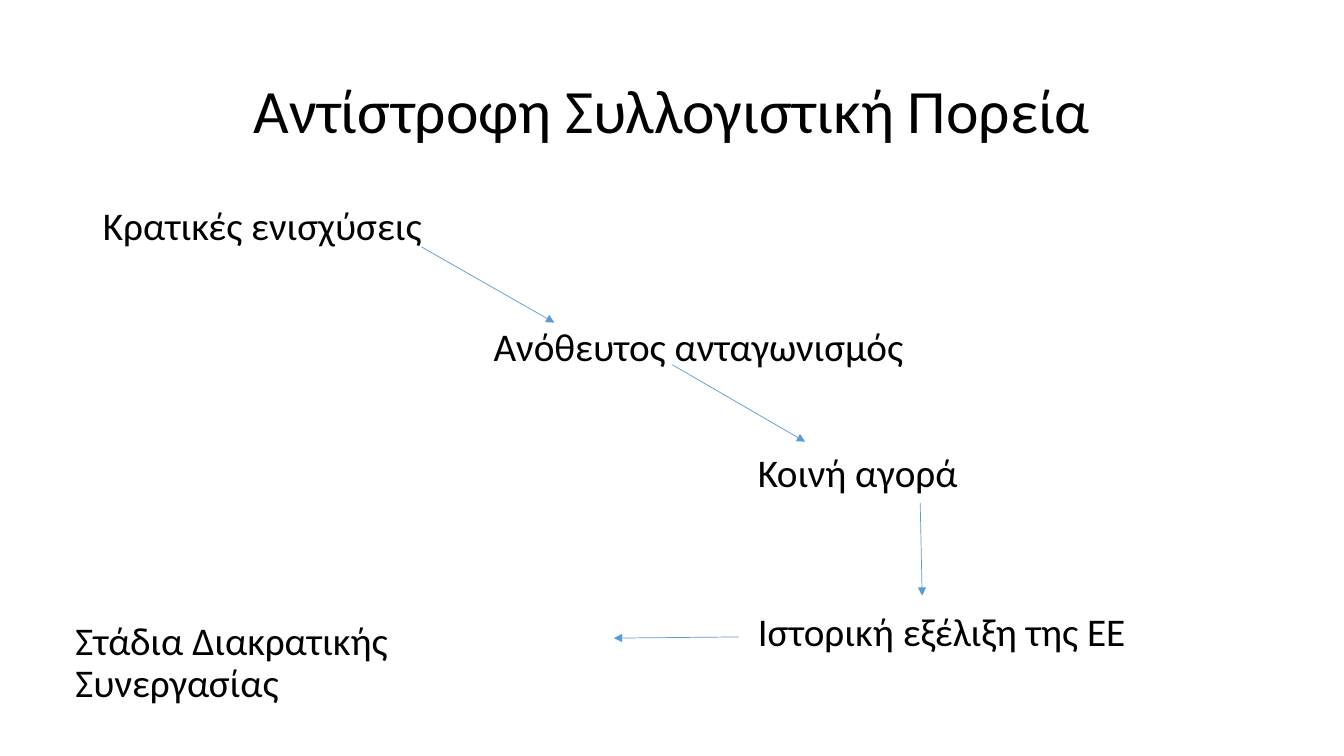
"""Build a slide that traces a reverse line of reasoning from state aid to stages of cooperation."""
from lxml import etree
from pptx import Presentation
from pptx.dml.color import RGBColor
from pptx.enum import shapes, text
from pptx.oxml.ns import qn
from pptx.util import Cm, Pt

BLACK = RGBColor(0x00, 0x00, 0x00)
BLUE = RGBColor(0x5B, 0x9B, 0xD5)


def write(sp, box, words, size):
    sp.left, sp.top, sp.width, sp.height = [Cm(v) for v in box]
    tf = sp.text_frame
    tf.word_wrap = True
    tf.auto_size = text.MSO_AUTO_SIZE.NONE
    p = tf.paragraphs[0]
    p.line_spacing = 0.9
    r = p.add_run()
    r.text = words
    r.font.name = "Calibri"
    r.font.size = Pt(size)
    r.font.color.rgb = BLACK
    return p


prs = Presentation()
prs.slide_width, prs.slide_height = Cm(33.87), Cm(19.05)
slide = prs.slides.add_slide(prs.slide_layouts[1])

title = slide.shapes.title
p = write(title, (2.34, 1.02, 29.21, 3.68), "Αντίστροφη Συλλογιστική Πορεία", 44)
p.alignment = text.PP_ALIGN.CENTER
title.text_frame.vertical_anchor = text.MSO_ANCHOR.MIDDLE

steps = [
    ("Κρατικές ενισχύσεις", (2.34, 5.08, 12.83, 3.71)),
    ("Ανόθευτος ανταγωνισμός", (12.19, 8.13, 12.83, 3.71)),
    ("Κοινή αγορά", (18.85, 11.3, 10.8, 3.1)),
    ("Ιστορική εξέλιξη της ΕΕ", (18.85, 15.32, 10.6, 2.64)),
    ("Στάδια Διακρατικής Συνεργασίας", (1.65, 15.54, 13.5, 2.18)),
]
for i, (words, box) in enumerate(steps):
    sp = slide.placeholders[1] if i == 0 else slide.shapes.add_textbox(0, 0, 0, 0)
    p = write(sp, box, words, 28)
    p.space_before = Pt(10)
    p.alignment = text.PP_ALIGN.LEFT
    if i == 0:
        pPr = p._p.get_or_add_pPr()
        pPr.set("marL", "0")
        pPr.set("indent", "0")
        etree.SubElement(pPr, qn("a:buNone"))

arrows = [
    (10.62, 6.22, 13.97, 8.13),
    (16.94, 9.19, 20.29, 11.13),
    (23.19, 12.67, 23.24, 15.01),
    (18.62, 16.05, 15.47, 16.08),
]
for ends in arrows:
    arrow = slide.shapes.add_connector(shapes.MSO_CONNECTOR.STRAIGHT, *[Cm(v) for v in ends])
    arrow.line.color.rgb = BLUE
    arrow.line.width = Pt(0.5)
    etree.SubElement(arrow.line._get_or_add_ln(), qn("a:tailEnd"), type="triangle")
    etree.SubElement(arrow._element.spPr, qn("a:effectLst"))

prs.save("out.pptx")
